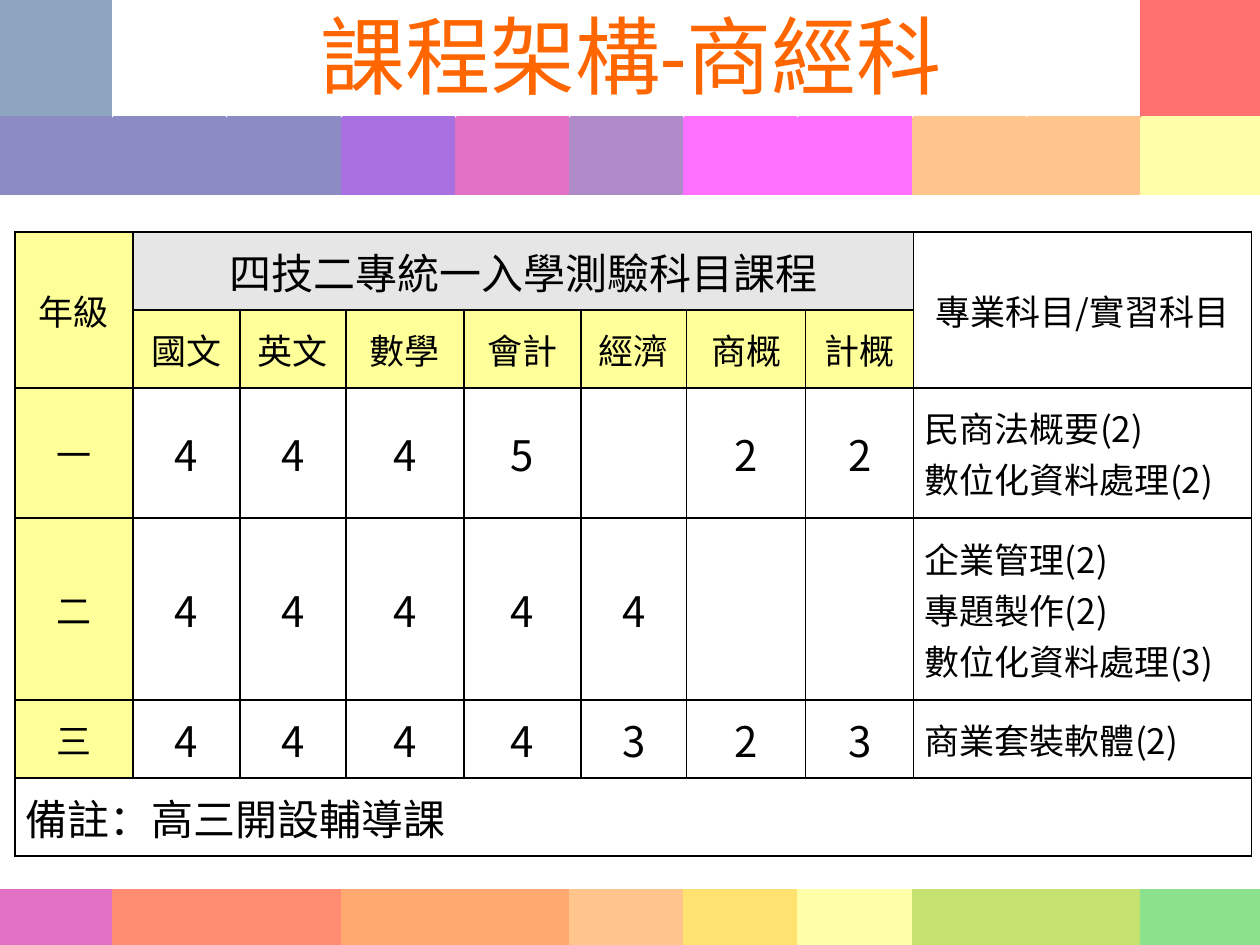
import dataclasses

import lxml.etree
import pptx
import pptx.dml.color
import pptx.enum.shapes
import pptx.enum.text
import pptx.oxml.ns
import pptx.util

PX = 914400 // 126


@dataclasses.dataclass(frozen=True)
class Theme:
    title: str = "FF6600"
    text: str = "000000"
    paper: str = "FFFFFF"
    label: str = "FFFF99"
    heading: str = "E6E6E6"
    title_font: str = "Calibri"
    body_font: str = "Noto Sans CJK SC"
    title_size: float = 48.6
    large: int = 24
    small: int = 20


theme = Theme()
qn = pptx.oxml.ns.qn
rgb = pptx.dml.color.RGBColor.from_string
align = pptx.enum.text.PP_ALIGN
middle = pptx.enum.text.MSO_ANCHOR.MIDDLE


def add_block(left, top, width, height, color):
    block = slide.shapes.add_shape(
        pptx.enum.shapes.MSO_SHAPE.RECTANGLE,
        left * PX, top * PX, width * PX, height * PX)
    block.shadow.inherit = False
    block.fill.solid()
    block.fill.fore_color.rgb = rgb(color)
    block.line.fill.background()
    return block


def add_run(paragraph, words, size, color, font):
    run = paragraph.add_run()
    run.text = words
    run.font.size = pptx.util.Pt(size)
    run.font.color.rgb = rgb(color)
    run.font.name = font
    east_asian = lxml.etree.SubElement(run.font._element, qn("a:ea"))
    east_asian.set("typeface", theme.body_font)


deck = pptx.Presentation()
deck.slide_width = 1260 * PX
deck.slide_height = 945 * PX
slide = deck.slides.add_slide(deck.slide_layouts[5])

TILE = 118
tile_rows = {
    0: ["376092"] + [theme.paper] * 9 + ["FF0000"],
    118: ["333399"] * 3 + ["6600CC", "CC0099", "7030A0"]
         + ["FF00FF"] * 2 + ["FF9933"] * 2 + ["FFFF66"],
    827: ["CC0099"] + ["FF3300"] * 2 + ["FF6600"] * 2
         + ["FF9933", "FFCC00", "FFFF66"] + ["99CC00"] * 2 + ["33CC33"],
}
for column in range(11):
    for top, colors in tile_rows.items():
        tile = add_block(round(column * (1260 - TILE) / 10), top,
                         TILE, TILE, colors[column])
        tile.line.color.rgb = rgb(colors[column])
        tile.line.width = pptx.util.Pt(2)

add_block(0, 234, 1260, 596, theme.paper)
veil = add_block(0, 0, 1260, 945, theme.paper)
veil_color = veil.element.spPr.find(qn("a:solidFill"))[0]
lxml.etree.SubElement(veil_color, qn("a:alpha")).set("val", "44000")
for top in (195, 820):
    add_block(0, top, 1260, 69, theme.paper)

title = slide.shapes.title
slide.shapes.element.append(title.element)
title.left, title.top = 115 * PX, -5 * PX
title.width, title.height = 1032 * PX, 118 * PX
title.text_frame.word_wrap = True
title.text_frame.auto_size = pptx.enum.text.MSO_AUTO_SIZE.NONE
title.text_frame.vertical_anchor = middle
heading = title.text_frame.paragraphs[0]
heading.alignment = align.CENTER
add_run(heading, "課程架構-商經科", theme.title_size, theme.title, theme.title_font)

column_widths = [118, 107, 106, 118, 117, 106, 119, 108, 338]
row_heights = [78, 78, 130, 182, 78, 78]
curriculum = [
    ["年級", "四技二專統一入學測驗科目課程", "", "", "", "", "", "", "專業科目/實習科目"],
    ["", "國文", "英文", "數學", "會計", "經濟", "商概", "計概", ""],
    ["一", "4", "4", "4", "5", "", "2", "2", "民商法概要(2)\n數位化資料處理(2)"],
    ["二", "4", "4", "4", "4", "4", "", "", "企業管理(2)\n專題製作(2)\n數位化資料處理(3)"],
    ["三", "4", "4", "4", "4", "3", "2", "3", "商業套裝軟體(2)"],
    ["備註：高三開設輔導課", "", "", "", "", "", "", "", ""],
]
table = slide.shapes.add_table(
    len(row_heights), len(column_widths), 15 * PX, 232 * PX,
    sum(column_widths) * PX, sum(row_heights) * PX).table
table.first_row = False
table.horz_banding = False
for column, width in enumerate(column_widths):
    table.columns[column].width = width * PX
for row, height in enumerate(row_heights):
    table.rows[row].height = height * PX

NOTE, LAST = 5, 8
for row, entries in enumerate(curriculum):
    for column, entry in enumerate(entries):
        cell = table.cell(row, column)
        cell.vertical_anchor = middle
        cell.margin_left = cell.margin_right = 11 * PX
        cell.margin_top = cell.margin_bottom = 6 * PX
        for side in ("a:lnL", "a:lnR", "a:lnT", "a:lnB"):
            border = lxml.etree.SubElement(cell._tc.get_or_add_tcPr(), qn(side))
            border.set("w", str(pptx.util.Pt(1)))
            ink = lxml.etree.SubElement(border, qn("a:solidFill"))
            lxml.etree.SubElement(ink, qn("a:srgbClr")).set("val", theme.text)

        if row == 0 and 0 < column < LAST:
            cell.fill.solid()
            cell.fill.fore_color.rgb = rgb(theme.heading)
        elif row < NOTE and (column == 0 or row == 1 and column < LAST):
            cell.fill.solid()
            cell.fill.fore_color.rgb = rgb(theme.label)
        else:
            cell.fill.background()

        if not entry:
            continue
        is_large = entry.isdigit() or row == NOTE or (row, column) == (0, 1)
        is_left = row == NOTE or row > 1 and column == LAST
        for index, words in enumerate(entry.split("\n")):
            frame = cell.text_frame
            paragraph = frame.add_paragraph() if index else frame.paragraphs[0]
            paragraph.alignment = align.LEFT if is_left else align.CENTER
            indents = paragraph._p.get_or_add_pPr()
            indents.set("marL", str(47 * PX))
            indents.set("indent", str(-47 * PX))
            add_run(paragraph, words, theme.large if is_large else theme.small,
                    theme.text, theme.body_font)

for first, last in [((0, 0), (1, 0)), ((0, 1), (0, 7)),
                    ((0, LAST), (1, LAST)), ((NOTE, 0), (NOTE, LAST))]:
    table.cell(*first).merge(table.cell(*last))

deck.save("out.pptx")
